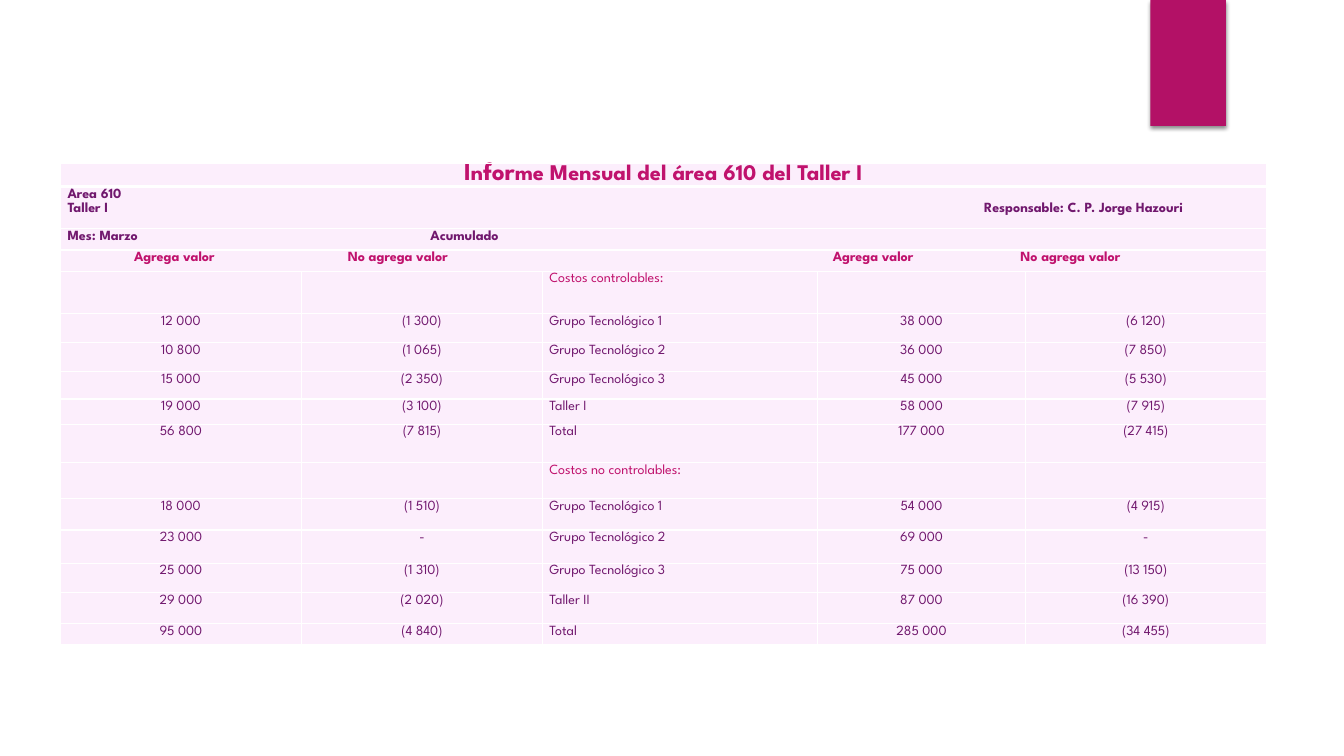
from lxml import etree
from pptx import Presentation
from pptx.dml.color import RGBColor
from pptx.enum import shapes, text
from pptx.oxml import ns
from pptx.util import Inches, Pt

COLORS = {"accent": "B31166", "heading": "C0126D", "body": "71186E",
          "cell": "FCEEFC", "border": "FFFFFF", "shadow": "000000"}
FONT = "League Spartan"
COLUMN_WIDTHS = [2.39, 2.39, 2.73, 2.06, 2.39]
ROW_HEIGHTS = [0.21, 0.42, 0.21, 0.21, 0.42, 0.29, 0.29, 0.27,
               0.25, 0.38, 0.36, 0.31, 0.33, 0.29, 0.31, 0.21]
TITLE_RUNS = [("I", 18), ("n", 16), ("for", 18),
              ("me Mensual del área 610 del Taller I", 16)]
# Heading rows across the table: lines, tab stops, colour
HEADINGS = [
    (["Área 610", "Taller I\tResponsable: C. P. Jorge Hazouri"], [9.09], "body"),
    (["Mes: Marzo\tAcumulado"], [3.6], "body"),
    (["\tAgrega valor\tNo agrega valor\tAgrega valor\tNo agrega valor"],
     [0.66, 2.78, 7.59, 9.45], "heading"),
]
COSTS = [
    ("", "", "Costos controlables:", "", ""),
    ("12 000", "(1 300)", "Grupo Tecnológico 1", "38 000", "(6 120)"),
    ("10 800", "(1 065)", "Grupo Tecnológico 2", "36 000", "(7 850)"),
    ("15 000", "(2 350)", "Grupo Tecnológico 3", "45 000", "(5 530)"),
    ("19 000", "(3 100)", "Taller I", "58 000", "(7 915)"),
    ("56 800", "(7 815)", "Total", "177 000", "(27 415)"),
    ("", "", "Costos no controlables:", "", ""),
    ("18 000", "(1 510)", "Grupo Tecnológico 1", "54 000", "(4 915)"),
    ("23 000", "-", "Grupo Tecnológico 2", "69 000", "-"),
    ("25 000", "(1 310)", "Grupo Tecnológico 3", "75 000", "(13 150)"),
    ("29 000", "(2 020)", "Taller II", "87 000", "(16 390)"),
    ("95 000", "(4 840)", "Total", "285 000", "(34 455)"),
]


def add_element(parent, tag, **attributes):
    element = etree.SubElement(parent, ns.qn(tag))
    for name, value in attributes.items():
        element.set(name, str(value))
    return element


def set_font(font, size, color, bold=False):
    font.name, font.size, font.bold = FONT, Pt(size), bold
    font.color.rgb = RGBColor.from_string(COLORS[color])


def style_cell(cell, bottom_width=1):
    cell.margin_left = cell.margin_right = Inches(0.07)
    cell.margin_top = cell.margin_bottom = 0
    properties = cell._tc.get_or_add_tcPr()
    for side in "LRTB":
        width = bottom_width if side == "B" else 1
        line = add_element(properties, f"a:ln{side}", w=Pt(width))
        fill = add_element(line, "a:solidFill")
        add_element(fill, "a:srgbClr", val=COLORS["border"])
    cell.fill.solid()
    cell.fill.fore_color.rgb = RGBColor.from_string(COLORS["cell"])


def write_paragraph(paragraph, content, color, bold=False, centred=False, tabs=()):
    paragraph.text = content
    paragraph.alignment = text.PP_ALIGN.CENTER if centred else text.PP_ALIGN.JUSTIFY
    paragraph.line_spacing = 1.15
    if tabs:
        tab_list = add_element(paragraph._p.get_or_add_pPr(), "a:tabLst")
        for position in tabs:
            add_element(tab_list, "a:tab", pos=Inches(position), algn="l")
    set_font(paragraph.font, 10, color, bold)


def write_title(cell):
    paragraph = cell.text_frame.paragraphs[0]
    paragraph.alignment = text.PP_ALIGN.CENTER
    set_font(paragraph.font, 16, "heading", True)
    for content, size in TITLE_RUNS:
        run = paragraph.add_run()
        run.text = content
        run.font.size = Pt(size)


def write_heading(cell, lines, tabs, color):
    frame = cell.text_frame
    for index, line in enumerate(lines):
        paragraph = frame.add_paragraph() if index else frame.paragraphs[0]
        write_paragraph(paragraph, line, color, bold=True,
                        tabs=tabs if "\t" in line else ())


def add_accent(slide, left, top, width, height):
    shape = slide.shapes.add_shape(shapes.MSO_SHAPE.RECTANGLE, Inches(left),
                                   Inches(top), Inches(width), Inches(height))
    shape.fill.solid()
    shape.fill.fore_color.rgb = RGBColor.from_string(COLORS["accent"])
    shape.line.fill.background()
    # Soft shadow straight below
    shape.shadow.inherit = False
    effects = shape._element.spPr.find(ns.qn("a:effectLst"))
    shadow = add_element(effects, "a:outerShdw", blurRad=Pt(3), dist=Pt(2),
                         dir=90 * 60000, rotWithShape=0)
    color = add_element(shadow, "a:srgbClr", val=COLORS["shadow"])
    add_element(color, "a:alpha", val=45000)


def add_report(slide, left, top, width, height):
    table = slide.shapes.add_table(len(ROW_HEIGHTS), len(COLUMN_WIDTHS), Inches(left),
                                   Inches(top), Inches(width), Inches(height)).table
    table.first_row = table.horz_banding = False
    for column, column_width in zip(table.columns, COLUMN_WIDTHS):
        column.width = Inches(column_width)
    for index, row in enumerate(table.rows):
        row.height = Inches(ROW_HEIGHTS[index])
        for cell in row.cells:
            style_cell(cell, bottom_width=1 if index else 3)

    # Title and headings span every column
    first_cost_row = 1 + len(HEADINGS)
    for index in range(first_cost_row):
        table.cell(index, 0).merge(table.cell(index, len(COLUMN_WIDTHS) - 1))
    write_title(table.cell(0, 0))
    for index, heading in enumerate(HEADINGS, 1):
        write_heading(table.cell(index, 0), *heading)

    # Costs
    for row_index, values in enumerate(COSTS, first_cost_row):
        color = "body" if values[0] else "heading"
        for column_index, value in enumerate(values):
            paragraph = table.cell(row_index, column_index).text_frame.paragraphs[0]
            write_paragraph(paragraph, value, color, centred=column_index != 2)


def main():
    presentation = Presentation()
    presentation.slide_width = Inches(13.33)
    presentation.slide_height = Inches(7.5)
    slide = presentation.slides.add_slide(presentation.slide_layouts[6])
    add_accent(slide, 11.41, 0, 0.75, 1.25)
    add_report(slide, 0.6, 1.62, sum(COLUMN_WIDTHS), sum(ROW_HEIGHTS))
    presentation.save("out.pptx")


if __name__ == "__main__":
    main()
